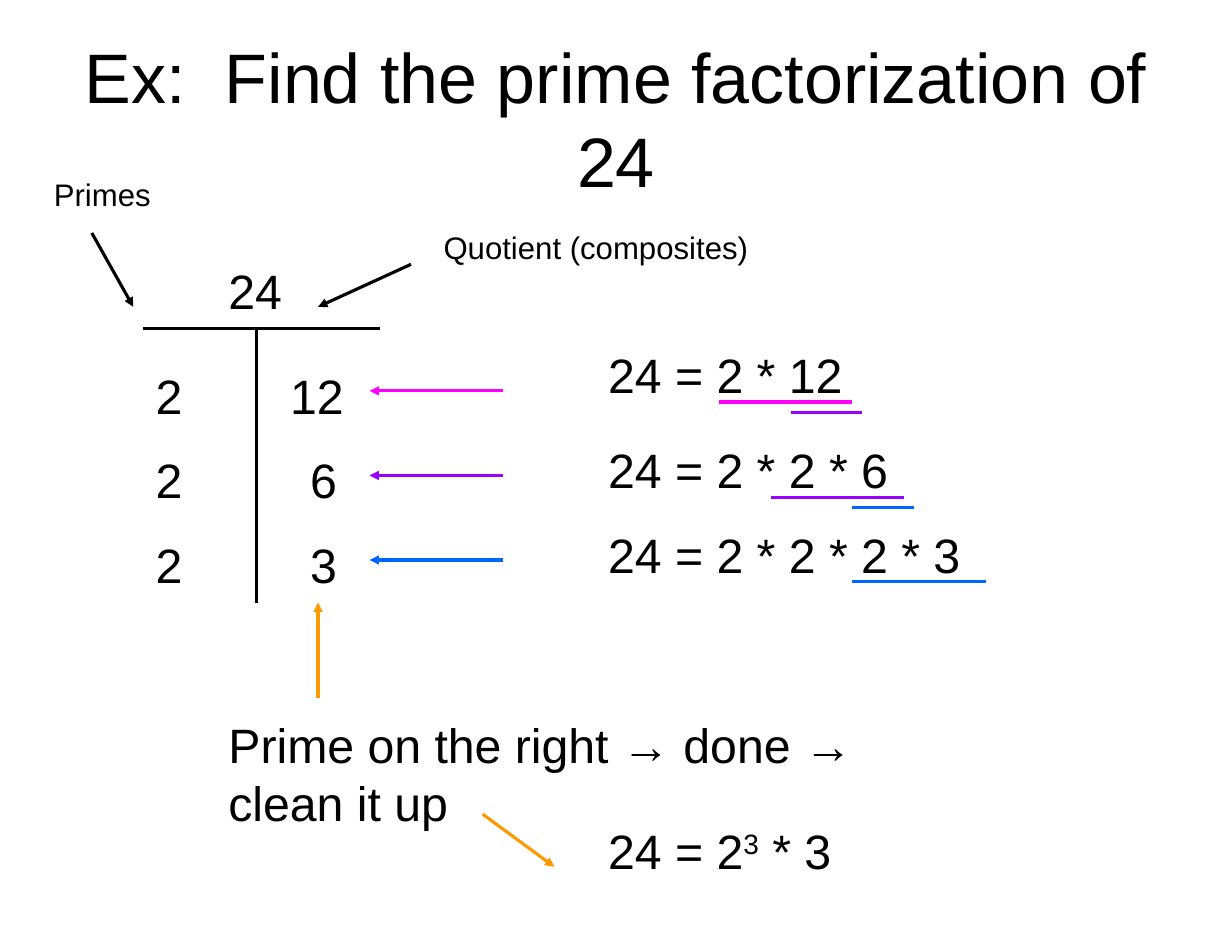
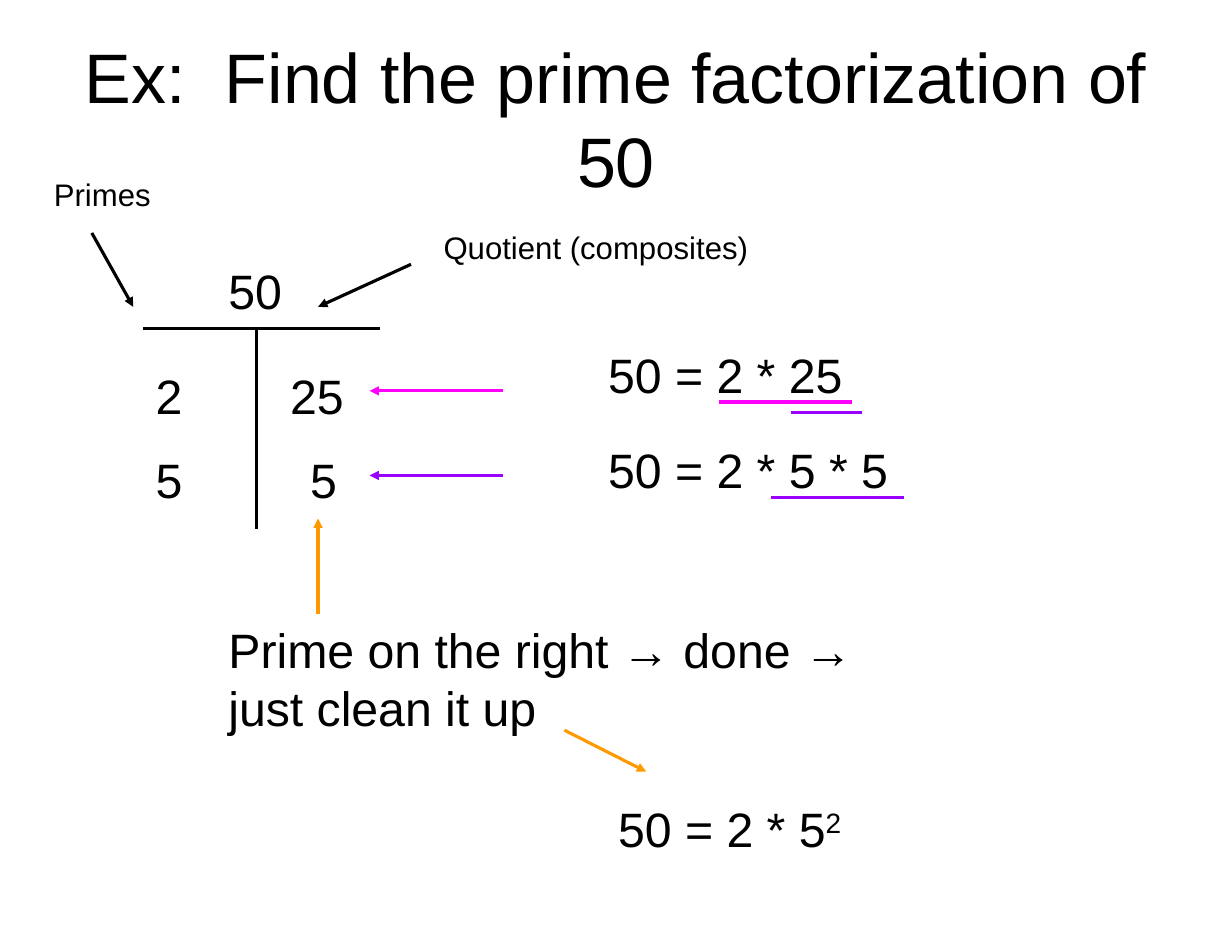
from dataclasses import dataclass

from lxml import etree
from pptx import Presentation
from pptx.dml.color import RGBColor
from pptx.enum import shapes, text
from pptx.oxml.ns import qn
from pptx.util import Inches, Pt

FONT = "Arial"
BLACK, PINK, PURPLE, BLUE, ORANGE = "000000", "FF00FF", "9900FF", "0066FF", "FF9900"
BODY, SMALL, TITLE = 31, 20, 45
ROW_GAP = 0.755

Point = tuple[float, float]


@dataclass
class Row:
    """Fixed places and colour of one division step."""
    color: str
    eq_top: float
    under: Point          # start of the line under the newest factors
    carry: Point = (0, 0)  # start of the line under the factor split next
    carry_w: float = 0


@dataclass
class Step:
    prime: str
    quot: str
    right: str


@dataclass
class Example:
    num: str
    steps: list[Step]
    stem_end: float
    tip: float
    note: str
    note_top: float
    clean: tuple[Point, Point]
    answer: list[tuple[str, bool]]
    answer_at: tuple[float, float, float]


ROWS = [
    Row(PINK, 3.02, (6.42, 3.59), (7.06, 3.68), 0.64),
    Row(PURPLE, 3.87, (6.88, 4.44), (7.61, 4.53), 0.55),
    Row(BLUE, 4.63, (7.61, 5.19)),
]

EXAMPLES = [
    Example("24",
            [Step("2", "12", "2 * 12"), Step("2", "6", "2 * 2 * 6"),
             Step("2", "3", "2 * 2 * 2 * 3")],
            5.38, 5.38, "Prime on the right → done → clean it up", 6.33,
            ((4.31, 7.27), (4.95, 7.74)),
            [("24 = 2", False), ("3", True), (" * 3", False)], (5.32, 7.27, 3.58)),
    Example("50",
            [Step("2", "25", "2 * 25"), Step("5", "5", "2 * 5 * 5")],
            4.72, 4.63, "Prime on the right → done → just clean it up", 5.48,
            ((5.04, 6.52), (5.77, 6.89)),
            [("50 = 2 * 5", False), ("2", True)], (5.41, 7.08, 3.03)),
]


def rgb(color: str) -> RGBColor:
    return RGBColor.from_string(color)


def set_frame(frame) -> None:
    frame.word_wrap = True
    frame.auto_size = text.MSO_AUTO_SIZE.NONE
    frame.margin_left = frame.margin_right = Inches(0.11)
    frame.margin_top = frame.margin_bottom = Inches(0.06)


def add_run(para, words: str, size: int, raised: bool = False) -> None:
    run = para.add_run()
    run.text = words
    run.font.name = FONT
    run.font.size = Pt(size)
    run.font.color.rgb = rgb(BLACK)
    if raised:
        run.font._element.set("baseline", "30000")


def add_text(slide, left: float, top: float, width: float,
             runs: list[tuple[str, bool]], size: int = BODY, height: float = 0.63) -> None:
    box = slide.shapes.add_textbox(Inches(left), Inches(top), Inches(width), Inches(height))
    set_frame(box.text_frame)
    for words, raised in runs:
        add_run(box.text_frame.paragraphs[0], words, size, raised)


def add_line(slide, start: Point, end: Point, color: str = BLACK, arrow: bool = False) -> None:
    line = slide.shapes.add_connector(
        shapes.MSO_CONNECTOR.STRAIGHT, *(Inches(n) for n in (*start, *end)))
    line.line.color.rgb = rgb(color)
    line.line.width = Pt(2)
    if arrow:
        etree.SubElement(line.line._get_or_add_ln(), qn("a:tailEnd"), type="triangle")
    etree.SubElement(line._element.spPr, qn("a:effectLst"))


def add_under(slide, start: Point, width: float, color: str) -> None:
    add_line(slide, start, (start[0] + width, start[1]), color)


def add_title(slide, words: str) -> None:
    title = slide.shapes.title
    title.left, title.top = Inches(0.55), Inches(0.34)
    title.width, title.height = Inches(9.9), Inches(1.42)
    frame = title.text_frame
    set_frame(frame)
    frame.vertical_anchor = text.MSO_ANCHOR.MIDDLE
    frame.paragraphs[0].alignment = text.PP_ALIGN.CENTER
    add_run(frame.paragraphs[0], words, TITLE)


def add_step(slide, num: str, step: Step, row: Row, index: int) -> None:
    top = 3.21 + index * ROW_GAP
    mid = 3.49 + index * ROW_GAP
    add_text(slide, 1.28, top, 0.46, [(step.prime, False)])
    add_text(slide, 2.48 if len(step.quot) > 1 else 2.66, top, 0.82, [(step.quot, False)])
    add_line(slide, (4.49, mid), (3.3, mid), row.color, arrow=True)
    add_text(slide, 5.32, row.eq_top, 3.58, [(f"{num} = {step.right}", False)])
    add_under(slide, row.under, 1.19, row.color)


def add_example(deck, ex: Example) -> None:
    slide = deck.slides.add_slide(deck.slide_layouts[5])
    add_title(slide, f"Ex:  Find the prime factorization of {ex.num}")

    # Division table
    add_line(slide, (1.28, 2.93), (3.39, 2.93))
    add_line(slide, (2.29, 2.93), (2.29, ex.stem_end))
    add_text(slide, 1.93, 2.27, 0.73, [(ex.num, False)])

    # Column labels
    add_text(slide, 0.37, 1.51, 1.19, [("Primes", False)], SMALL, 0.44)
    add_line(slide, (0.82, 2.08), (1.19, 2.74), arrow=True)
    add_text(slide, 3.85, 1.98, 3.02, [("Quotient (composites)", False)], SMALL, 0.44)
    add_line(slide, (3.67, 2.36), (2.84, 2.74), arrow=True)

    # Steps, and links from each step to the next
    rows = ROWS[:len(ex.steps)]
    for index, (step, row) in enumerate(zip(ex.steps, rows)):
        add_step(slide, ex.num, step, row, index)
    for row, after in zip(rows, rows[1:]):
        add_under(slide, row.carry, row.carry_w, after.color)

    # Closing note and answer
    add_line(slide, (2.84, ex.tip + 0.85), (2.84, ex.tip), ORANGE, arrow=True)
    add_text(slide, 1.93, ex.note_top, 6.23, [(ex.note, False)], height=1.15)
    add_line(slide, *ex.clean, ORANGE, arrow=True)
    add_text(slide, *ex.answer_at, ex.answer)


def main() -> None:
    deck = Presentation()
    deck.slide_width, deck.slide_height = Inches(11), Inches(8.5)
    for ex in EXAMPLES:
        add_example(deck, ex)
    deck.save("out.pptx")


if __name__ == "__main__":
    main()
